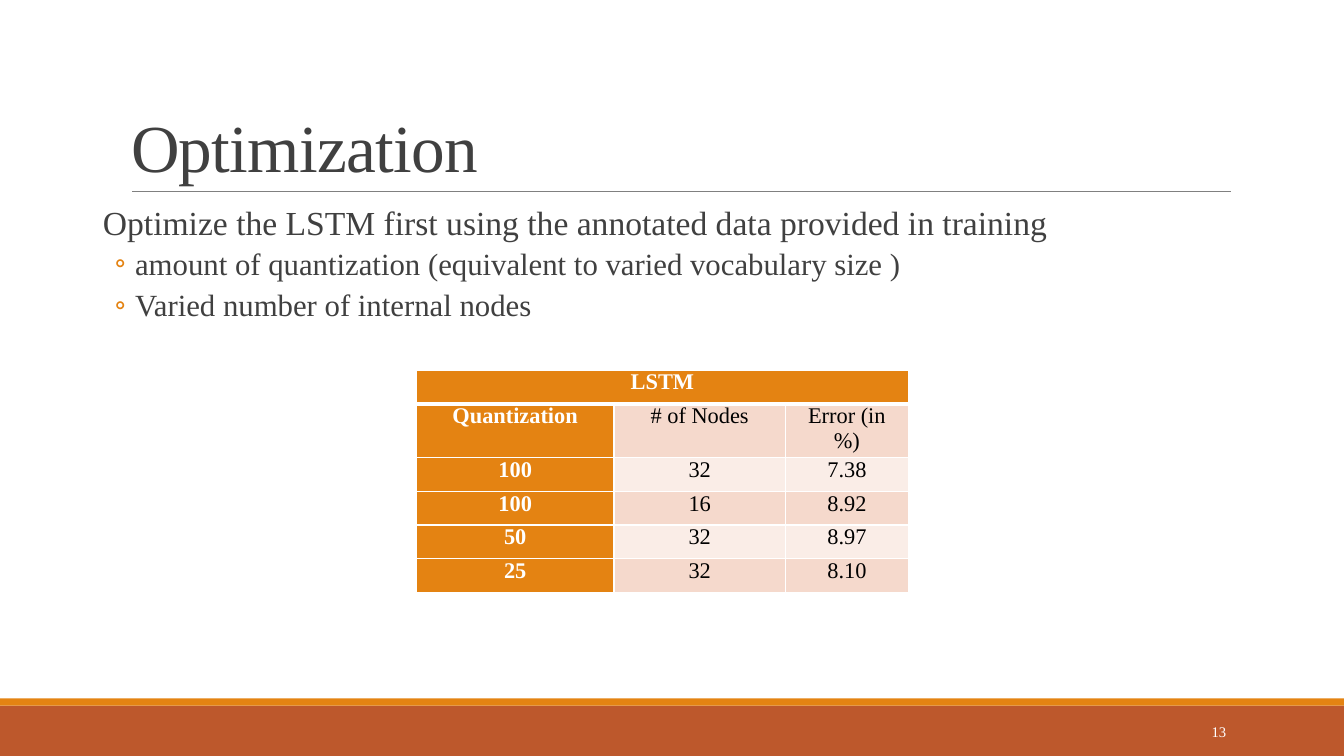
import pptx
import pptx.util
import pptx.dml.color
import pptx.enum.shapes
import pptx.enum.text
import pptx.oxml
import pptx.oxml.ns
import lxml.etree

TITLE = "Optimization"
LEAD = "Optimize the LSTM first using the annotated data provided in training"
POINTS = [
    "amount of quantization (equivalent to varied vocabulary size )",
    "Varied number of internal nodes",
]
TABLE = [
    ["LSTM", "", ""],
    ["Quantization", "# of Nodes", "Error (in %)"],
    ["100", "32", "7.38"],
    ["100", "16", "8.92"],
    ["50", "32", "8.97"],
    ["25", "32", "8.10"],
]
PAGE = "13"

FONT = "Times New Roman"
C = {"orange": "E48312", "rust": "BD582C", "text": "404040", "rule": "808080",
     "white": "FFFFFF", "black": "000000", "band": "F5D9CC", "pale": "FAEDE7"}
W, H = 13.33, 7.5
FOOTER_H, STRIPE_H = 0.5, 0.07
COLS, ROW_H = [1.96, 1.7, 1.22], 0.335
ALIGN = pptx.enum.text.PP_ALIGN
ANCHOR = pptx.enum.text.MSO_ANCHOR
inch, pt = pptx.util.Inches, pptx.util.Pt


def rgb(name):
    return pptx.dml.color.RGBColor.from_string(C[name])


def place(shape, *box):
    shape.left, shape.top, shape.width, shape.height = map(inch, box)


def write(p, text, size, color="text", bold=False, align=ALIGN.LEFT,
          line=1.0, before=0, after=0, spacing=None):
    p.alignment, p.line_spacing = align, line
    p.space_before, p.space_after = pt(before), pt(after)
    r = p.add_run()
    r.text = text
    r.font.name, r.font.size, r.font.bold = FONT, pt(size), bold
    r.font.color.rgb = rgb(color)
    if spacing is not None:
        r.font._element.set("spc", str(spacing))


def bullet(p, char, left, hang):
    """Give a paragraph its indent and an orange bullet, or none."""
    pPr = p._p.get_or_add_pPr()
    pPr.set("marL", str(inch(left)))
    pPr.set("indent", str(-inch(hang)))
    if not char:
        lxml.etree.SubElement(pPr, pptx.oxml.ns.qn("a:buNone"))
        return
    clr = lxml.etree.SubElement(pPr, pptx.oxml.ns.qn("a:buClr"))
    lxml.etree.SubElement(clr, pptx.oxml.ns.qn("a:srgbClr"), val=C["orange"])
    lxml.etree.SubElement(pPr, pptx.oxml.ns.qn("a:buFont"), typeface="Calibri")
    lxml.etree.SubElement(pPr, pptx.oxml.ns.qn("a:buChar"), char=char)


def borders(cell, **widths):
    tcPr = cell._tc.get_or_add_tcPr()
    for i, side in enumerate("LRTB"):
        ln = pptx.oxml.parse_xml(
            f'<a:ln{side} {pptx.oxml.ns.nsdecls("a")} w="{pt(widths.get(side, 1))}">'
            f'<a:solidFill><a:srgbClr val="{C["white"]}"/></a:solidFill></a:ln{side}>')
        tcPr.insert(i, ln)


def bar(s, top, height, color):
    sp = s.shapes.add_shape(pptx.enum.shapes.MSO_SHAPE.RECTANGLE,
                            0, inch(top), inch(W), inch(height))
    sp.shadow.inherit = False
    sp.fill.solid()
    sp.fill.fore_color.rgb = rgb(color)
    sp.line.fill.background()


def add_frame(s):
    """Footer bars, the line under the title and the page number."""
    bar(s, H - FOOTER_H, FOOTER_H, "rust")
    bar(s, H - FOOTER_H - STRIPE_H, STRIPE_H, "orange")
    rule = s.shapes.add_connector(pptx.enum.shapes.MSO_CONNECTOR.STRAIGHT,
                                  inch(1.31), inch(1.9), inch(12.21), inch(1.9))
    rule.line.color.rgb, rule.line.width = rgb("rule"), pt(0.5)
    lxml.etree.SubElement(rule._element.spPr, pptx.oxml.ns.qn("a:effectLst"))
    tf = s.shapes.add_textbox(inch(10.83), inch(7.06), inch(1.43), inch(0.4)).text_frame
    tf.word_wrap, tf.vertical_anchor = True, ANCHOR.MIDDLE
    write(tf.paragraphs[0], PAGE, 10.5, "white", align=ALIGN.RIGHT)


def add_text(s):
    title, body = s.shapes.title, s.placeholders[1]
    place(title, 1.2, 0.31, 11, 1.59)
    tf = title.text_frame
    tf.auto_size, tf.vertical_anchor = pptx.enum.text.MSO_AUTO_SIZE.NONE, ANCHOR.BOTTOM
    write(tf.paragraphs[0], TITLE, 48, line=0.85, spacing=-50)

    place(body, 0.92, 2, 11.5, 5.41)
    tf = body.text_frame
    tf.auto_size = pptx.enum.text.MSO_AUTO_SIZE.NONE
    tf.margin_left = tf.margin_right = 0
    write(tf.paragraphs[0], LEAD, 24, line=0.9, before=12, after=2)
    bullet(tf.paragraphs[0], None, 0.1, 0)
    for point in POINTS:
        p = tf.add_paragraph()
        p.level = 1
        write(p, point, 22, line=0.9, before=2, after=4)
        bullet(p, "◦", 0.42, 0.2)


def add_results(s):
    table = s.shapes.add_table(len(TABLE), len(COLS), inch(4.13), inch(3.67),
                               inch(sum(COLS)), inch(ROW_H * len(TABLE))).table
    for col, width in zip(table.columns, COLS):
        col.width = inch(width)
    table.cell(0, 0).merge(table.cell(0, len(COLS) - 1))
    for i, row in enumerate(TABLE):
        table.rows[i].height = inch(ROW_H)
        for j, text in enumerate(row):
            cell = table.cell(i, j)
            head = i == 0 or j == 0
            cell.margin_left = cell.margin_right = inch(0.07)
            cell.margin_top = cell.margin_bottom = 0
            cell.fill.solid()
            cell.fill.fore_color.rgb = rgb("orange" if head else "band" if i % 2 else "pale")
            borders(cell, B=3 if i == 0 else 1, T=3 if i == 1 else 1)
            if text:
                write(cell.text_frame.paragraphs[0], text, 16, "white" if head else "black",
                      bold=head, align=ALIGN.CENTER, after=12)


def main():
    prs = pptx.Presentation()
    prs.slide_width, prs.slide_height = inch(W), inch(H)
    s = prs.slides.add_slide(prs.slide_layouts[1])
    add_frame(s)
    add_text(s)
    add_results(s)
    prs.save("out.pptx")


if __name__ == "__main__":
    main()
